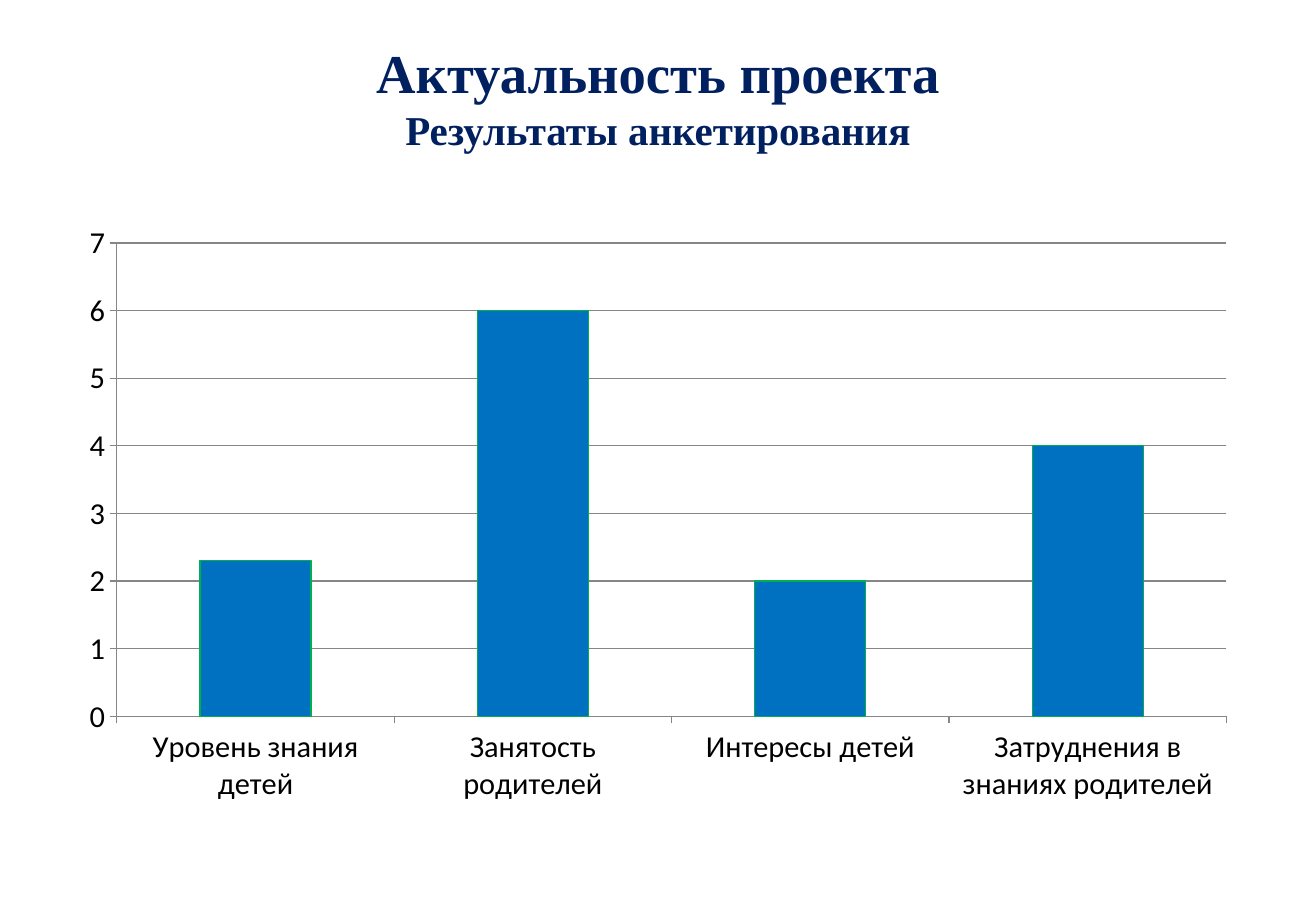
import pptx
import pptx.chart.data
import pptx.dml.color
import pptx.enum.chart
import pptx.enum.text
import pptx.oxml
import pptx.util

Inches, Pt = pptx.util.Inches, pptx.util.Pt


def paint(color, code):
    color.rgb = pptx.dml.color.RGBColor.from_string(code)


deck = pptx.Presentation()
deck.slide_width, deck.slide_height = Inches(10.83), Inches(7.5)
slide = deck.slides.add_slide(deck.slide_layouts[5])
left = int(deck.slide_width * 0.05)
width = deck.slide_width - 2 * left

# Title
title = slide.shapes.title
title.left, title.top = left, Inches(0.3)
title.width, title.height = width, Inches(1.25)
frame = title.text_frame
frame.word_wrap = True
frame.auto_size = pptx.enum.text.MSO_AUTO_SIZE.NONE
frame.vertical_anchor = pptx.enum.text.MSO_ANCHOR.TOP
frame.margin_top = Inches(0.02)
head = frame.paragraphs[0]
head.text = "Актуальность проекта\vРезультаты анкетирования"
head.alignment = pptx.enum.text.PP_ALIGN.CENTER
glow = (
    '<a:effectLst xmlns:a="http://schemas.openxmlformats.org/drawingml/2006/main">'
    '<a:outerShdw blurRad="38100" dist="25400" dir="2700000" algn="tl">'
    '<a:srgbClr val="F79646"><a:alpha val="40000"/></a:srgbClr>'
    "</a:outerShdw></a:effectLst>"
)
for run, size in zip(head.runs, (32.4, 24.3)):
    font = run.font
    font.name, font.size, font.bold = "Times New Roman", Pt(size), True
    paint(font.color, "002060")
    fill = run._r.rPr.find(pptx.oxml.ns.qn("a:solidFill"))
    fill.addnext(pptx.oxml.parse_xml(glow))

# Survey chart
data = pptx.chart.data.CategoryChartData()
data.categories = [
    "Уровень знания детей",
    "Занятость родителей",
    "Интересы детей",
    "Затруднения в знаниях родителей",
]
data.add_series("Series 1", (2.3, 6, 2, 4))
chart = slide.shapes.add_chart(
    pptx.enum.chart.XL_CHART_TYPE.COLUMN_CLUSTERED,
    left, Inches(1.75), width, Inches(4.95), data,
).chart
chart.has_legend = chart.has_title = False
chart.font.name, chart.font.size = "Calibri", Pt(18)
paint(chart.font.color, "000000")

plot = chart.plots[0]
plot.gap_width = 150
plot.vary_by_categories = False
bars = plot.series[0].format
bars.fill.solid()
paint(bars.fill.fore_color, "0070C0")
paint(bars.line.color, "00B050")
bars.line.width = Pt(0.75)

scale = chart.value_axis
scale.minimum_scale, scale.maximum_scale, scale.major_unit = 0, 7, 1
scale.has_major_gridlines = True
for part in (scale, scale.major_gridlines, chart.category_axis):
    paint(part.format.line.color, "868686")
    part.format.line.width = Pt(0.75)
for axis in (scale, chart.category_axis):
    axis.major_tick_mark = pptx.enum.chart.XL_TICK_MARK.OUTSIDE

deck.save("out.pptx")
